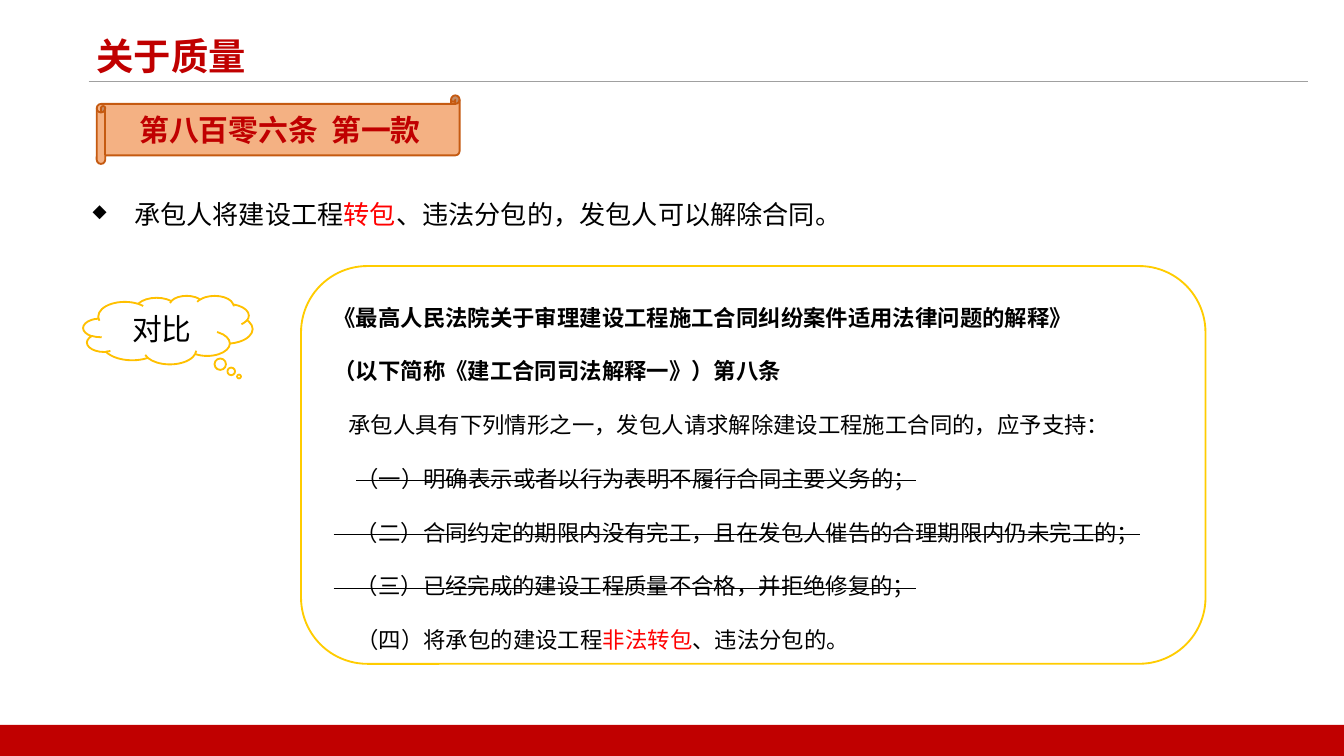
from dataclasses import dataclass

from lxml.etree import SubElement
from pptx import Presentation
from pptx.dml.color import RGBColor
from pptx.enum.shapes import MSO_CONNECTOR, MSO_SHAPE
from pptx.enum.text import MSO_ANCHOR, PP_ALIGN
from pptx.oxml.ns import qn
from pptx.util import Inches, Pt


@dataclass(frozen=True)
class Theme:
    font: str = "Noto Sans CJK SC"
    text: str = "000000"
    paper: str = "FFFFFF"
    accent: str = "C00000"
    highlight: str = "FF0000"
    rule: str = "A0A0A0"
    scroll: str = "F4B183"
    scroll_line: str = "C55A11"
    cloud_line: str = "FFC000"
    frame_line: str = "FFCC00"
    title: int = 20
    label: int = 16
    clause: int = 14
    body: int = 12


theme = Theme()


def write(p, text, size, color=theme.text, bold=False, strike=False):
    r = p.add_run()
    r.text = text
    r.font.size = Pt(size)
    r.font.bold = bold
    r.font.color.rgb = RGBColor.from_string(color)
    r.font.name = theme.font
    rPr = r.font._element
    SubElement(rPr, qn("a:ea"), typeface=theme.font)
    if strike:
        rPr.set("strike", "sngStrike")


def add_box(shape, left, top, width, height, fill=None, line=None):
    sp = s.shapes.add_shape(shape, Inches(left), Inches(top), Inches(width), Inches(height))
    sp.shadow.inherit = False
    if fill:
        sp.fill.solid()
        sp.fill.fore_color.rgb = RGBColor.from_string(fill)
    else:
        sp.fill.background()
    if line:
        sp.line.color.rgb = RGBColor.from_string(line)
        sp.line.width = Pt(1)
    else:
        sp.line.fill.background()
    sp.text_frame.vertical_anchor = MSO_ANCHOR.MIDDLE
    return sp


prs = Presentation()
prs.slide_width = Inches(10)
prs.slide_height = Inches(10 * 9 / 16)
s = prs.slides.add_slide(prs.slide_layouts[6])

rule = s.shapes.add_connector(
    MSO_CONNECTOR.STRAIGHT, Inches(0.66), Inches(0.61), Inches(9.73), Inches(0.61)
)
rule.line.color.rgb = RGBColor.from_string(theme.rule)
rule.line.width = Pt(0.5)
SubElement(rule._element.spPr, qn("a:effectLst"))

title = s.shapes.add_textbox(Inches(0.62), Inches(0.2), Inches(3.25), Inches(0.51))
title.text_frame.word_wrap = True
write(title.text_frame.paragraphs[0], "关于质量", theme.title, color=theme.accent, bold=True)

bar_height = 0.23
bar_top = prs.slide_height.inches - bar_height
add_box(MSO_SHAPE.RECTANGLE, 0, bar_top, 10, bar_height, fill=theme.accent)

scroll = add_box(
    MSO_SHAPE.HORIZONTAL_SCROLL, 0.72, 0.71, 2.7, 0.51, fill=theme.scroll, line=theme.scroll_line
)
p = scroll.text_frame.paragraphs[0]
p.alignment = PP_ALIGN.CENTER
write(p, "第八百零六条  第一款", theme.label, color=theme.accent, bold=True)

clause = s.shapes.add_textbox(Inches(0.59), Inches(1.19), Inches(8.81), Inches(0.49))
clause.text_frame.word_wrap = True
p = clause.text_frame.paragraphs[0]
p.line_spacing = 2
pPr = p._p.get_or_add_pPr()
pPr.set("marL", str(Inches(0.31)))
pPr.set("indent", str(Inches(-0.31)))
SubElement(pPr, qn("a:buSzPct"), val="70000")
SubElement(pPr, qn("a:buChar"), char="◆")
write(p, "承包人将建设工程", theme.clause)
write(p, "转包", theme.clause, color=theme.highlight)
write(p, "、违法分包的，发包人可以解除合同。", theme.clause)

cloud = add_box(
    MSO_SHAPE.CLOUD_CALLOUT, 0.62, 2.2, 1.26, 0.51, fill=theme.paper, line=theme.cloud_line
)
cloud.adjustments[0] = 0.42
cloud.adjustments[1] = 0.68
p = cloud.text_frame.paragraphs[0]
p.alignment = PP_ALIGN.CENTER
write(p, "对比", theme.label)

frame = add_box(MSO_SHAPE.ROUNDED_RECTANGLE, 2.24, 1.98, 6.73, 2.96, line=theme.frame_line)
bold, strike, red = {"bold": True}, {"strike": True}, {"color": theme.highlight}
lines = [
    (0, [("《最高人民法院关于审理建设工程施工合同纠纷案件适用法律问题的解释》", bold)]),
    (0, [("（以下简称《建工合同司法解释一》）第八条", bold)]),
    (0.11, [("承包人具有下列情形之一，发包人请求解除建设工程施工合同的，应予支持：", {})]),
    (0.17, [("（一）明确表示或者以行为表明不履行合同主要义务的；", strike)]),
    (0, [("　（二）合同约定的期限内没有完工，且在发包人催告的合理期限内仍未完工的；", strike)]),
    (0, [("　（三）已经完成的建设工程质量不合格，并拒绝修复的；", strike)]),
    (0.17, [("（四）将承包的建设工程", {}), ("非法转包", red), ("、违法分包的。", {})]),
]
tf = frame.text_frame
for i, (indent, runs) in enumerate(lines):
    p = tf.add_paragraph() if i else tf.paragraphs[0]
    p.alignment = PP_ALIGN.LEFT
    p.line_spacing = 2
    p._p.get_or_add_pPr().set("marL", str(Inches(indent)))
    for text, style in runs:
        write(p, text, theme.body, **style)

prs.save("out.pptx")
